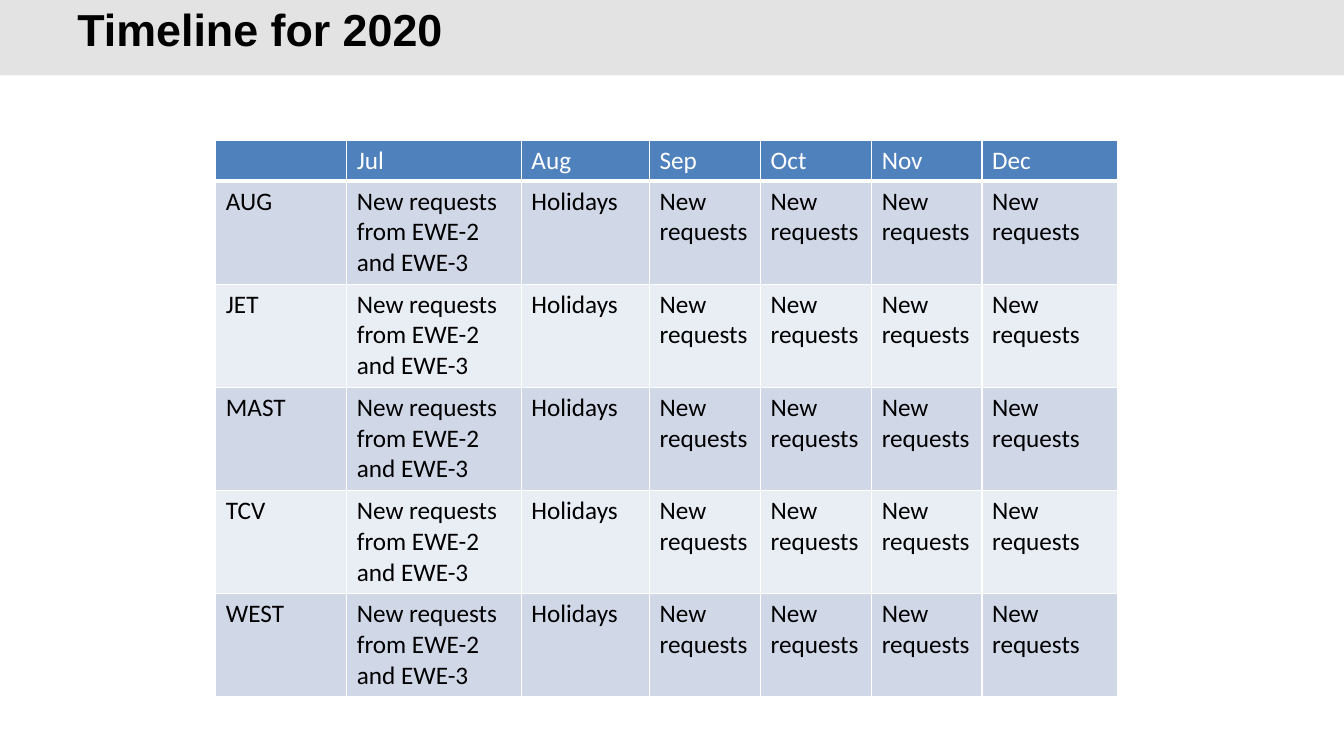
from lxml import etree
from pptx import Presentation
from pptx.dml.color import RGBColor
from pptx.enum import shapes, text
from pptx.oxml.ns import qn
from pptx.util import Cm, Pt

WHITE, BLACK, BAND_GREY = "FFFFFF", "000000", "E3E3E3"
HEADER_BLUE, ROW_FILLS = "4F81BD", ("D0D8E8", "E9EDF4")

MONTHS = ["Jul", "Aug", "Sep", "Oct", "Nov", "Dec"]
DEVICES = ["AUG", "JET", "MAST", "TCV", "WEST"]
PLAN = ["New requests from EWE-2 and EWE-3", "Holidays"] + ["New requests"] * 4
COLUMN_WIDTHS = [3.3, 4.4, 3.23, 2.8, 2.8, 2.78, 3.42]
HEADER_HEIGHT, ROW_HEIGHT = 1.03, 2.6


def color(hex_value):
    return RGBColor.from_string(hex_value)


def write(frame, words, size=18, font="Calibri", fill=BLACK, bold=False, spacing=None):
    paragraph = frame.paragraphs[0]
    paragraph.line_spacing = spacing
    paragraph.font.size = Pt(size)
    if words:
        run = paragraph.add_run()
        run.text = words
        run.font.size = Pt(size)
        run.font.name = font
        run.font.bold = bold
        run.font.color.rgb = color(fill)


def add_borders(cell, bottom):
    """Draw white cell edges, 1 pt except for the given bottom width."""
    properties = cell._tc.get_or_add_tcPr()
    for edge, width in (("L", 1), ("R", 1), ("T", 1), ("B", bottom)):
        line = etree.SubElement(properties, qn(f"a:ln{edge}"), w=str(Pt(width)))
        solid = etree.SubElement(line, qn("a:solidFill"))
        etree.SubElement(solid, qn("a:srgbClr"), val=WHITE)


def add_title_band(slide, left, top, width, height):
    band = slide.shapes.add_shape(shapes.MSO_SHAPE.RECTANGLE,
                                  Cm(left), Cm(top), Cm(width), Cm(height))
    band.shadow.inherit = False
    band.fill.solid()
    band.fill.fore_color.rgb = color(BAND_GREY)
    band.line.fill.background()

    title = slide.shapes.add_textbox(Cm(left + 1.7), Cm(top + 0.2), Cm(27.94), Cm(1.27))
    frame = title.text_frame
    frame.word_wrap = True
    frame.vertical_anchor = text.MSO_ANCHOR.MIDDLE
    write(frame, "Timeline for 2020", size=32, font="Arial", bold=True, spacing=Pt(32))


def add_timeline(slide, left, top):
    rows = [[""] + MONTHS] + [[device] + PLAN for device in DEVICES]
    height = HEADER_HEIGHT + ROW_HEIGHT * len(DEVICES)
    timeline = slide.shapes.add_table(len(rows), len(COLUMN_WIDTHS), Cm(left), Cm(top),
                                      Cm(sum(COLUMN_WIDTHS)), Cm(height)).table
    for column, width in zip(timeline.columns, COLUMN_WIDTHS):
        column.width = Cm(width)
    for index, entries in enumerate(rows):
        header = index == 0
        timeline.rows[index].height = Cm(HEADER_HEIGHT if header else ROW_HEIGHT)
        for cell, words in zip(timeline.rows[index].cells, entries):
            add_borders(cell, bottom=3 if header else 1)
            cell.fill.solid()
            cell.fill.fore_color.rgb = color(HEADER_BLUE if header else ROW_FILLS[(index - 1) % 2])
            write(cell.text_frame, words, fill=WHITE if header else BLACK)


def main():
    deck = Presentation()
    deck.slide_width, deck.slide_height = Cm(33.87), Cm(19.05)
    slide = deck.slides.add_slide(deck.slide_layouts[6])
    add_title_band(slide, 0, 0, 33.87, 1.9)
    add_timeline(slide, 5.44, 3.53)
    deck.save("out.pptx")


if __name__ == "__main__":
    main()
